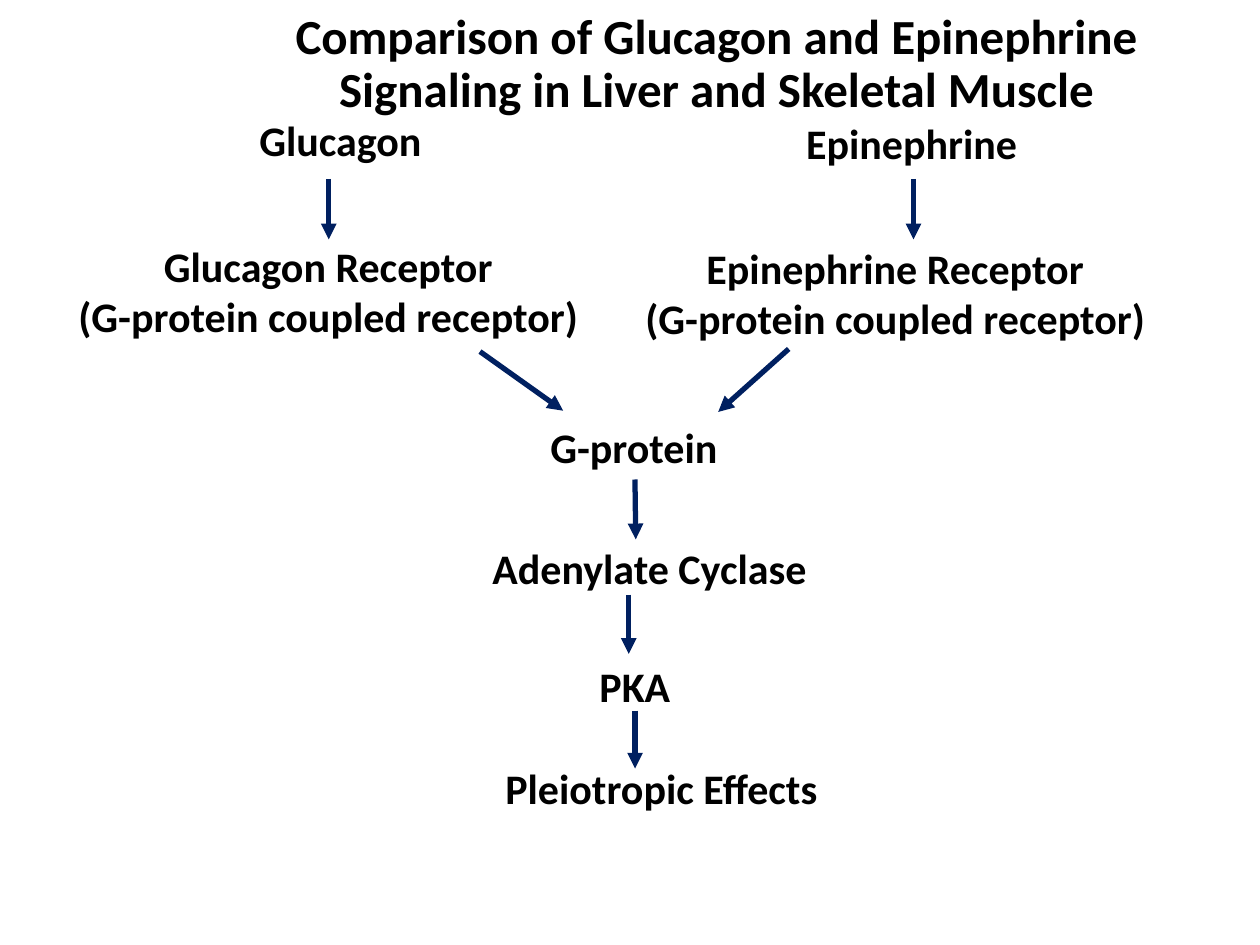
from dataclasses import dataclass

from lxml import etree
from pptx import Presentation
from pptx.dml.color import RGBColor
from pptx.enum import shapes, text
from pptx.oxml import ns
from pptx.shapes.autoshape import Shape
from pptx.slide import Slide
from pptx.util import Pt


@dataclass(frozen=True)
class Theme:
    font: str = "Calibri"
    ink: RGBColor = RGBColor(0x00, 0x00, 0x00)
    arrow: RGBColor = RGBColor(0x00, 0x20, 0x60)
    title_size: float = 28
    label_size: float = 24
    arrow_width: float = 3


@dataclass(frozen=True)
class Label:
    lines: tuple[str, ...]
    left: float
    top: float
    width: float
    height: float = 36.4
    align: text.PP_ALIGN = text.PP_ALIGN.LEFT


@dataclass(frozen=True)
class Arrow:
    start: tuple[float, float]
    end: tuple[float, float]
    source: str = ""


THEME = Theme()
TITLE = "Comparison of Glucagon and Epinephrine Signaling in Liver and Skeletal Muscle"
COUPLING = "(G-protein coupled receptor)"
CENTER = text.PP_ALIGN.CENTER

LABELS = (
    Label(("Glucagon",), 141.1, 62, 108),
    Label(("Epinephrine",), 453.6, 63.4, 136.1),
    Label(("Glucagon Receptor", COUPLING), 36, 133.9, 303.1, 65.4, CENTER),
    Label(("Epinephrine Receptor", COUPLING), 360, 134.9, 303.1, 65.4, CENTER),
    Label(("G-protein",), 307.4, 237.6, 110.9),
    Label(("Adenylate Cyclase",), 274.3, 306.2, 195.8),
    Label(("PKA",), 335.5, 374, 55.4),
    Label(("Pleiotropic Effects",), 281.7, 432.2, 195.1),
)

ARROWS = (
    Arrow((187.9, 102.2), (187.9, 136.8)),
    Arrow((522, 102.2), (522, 136.8)),
    Arrow((274.3, 200.9), (321.8, 234.7)),
    Arrow((450.7, 199.4), (410.4, 235.4)),
    Arrow((362.9, 273.6), (363.3, 308.2), "G-protein"),
    Arrow((359.3, 339.8), (359.3, 373.7)),
    Arrow((362.9, 406.1), (362.9, 439.2)),
)


def add_run(paragraph, wording: str, size: float) -> None:
    run = paragraph.add_run()
    run.text = wording
    run.font.name = THEME.font
    run.font.size = Pt(size)
    run.font.bold = True
    run.font.color.rgb = THEME.ink


def draw_title(slide: Slide) -> None:
    heading = slide.shapes.title
    heading.left, heading.top = Pt(115.2), Pt(6.5)
    heading.width, heading.height = Pt(588.2), Pt(61.2)
    frame = heading.text_frame
    frame.word_wrap = True
    frame.auto_size = text.MSO_AUTO_SIZE.NONE
    frame.vertical_anchor = text.MSO_ANCHOR.MIDDLE
    paragraph = frame.paragraphs[0]
    paragraph.alignment = CENTER
    paragraph.line_spacing = 0.9
    add_run(paragraph, TITLE, THEME.title_size)


def draw_label(slide: Slide, label: Label) -> Shape:
    box = slide.shapes.add_textbox(
        Pt(label.left), Pt(label.top), Pt(label.width), Pt(label.height)
    )
    frame = box.text_frame
    frame.word_wrap = False
    frame.auto_size = text.MSO_AUTO_SIZE.SHAPE_TO_FIT_TEXT
    for index, line in enumerate(label.lines):
        paragraph = frame.add_paragraph() if index else frame.paragraphs[0]
        paragraph.alignment = label.align
        add_run(paragraph, line, THEME.label_size)
    return box


def draw_arrow(slide: Slide, arrow: Arrow, steps: dict[str, Shape]) -> None:
    connector = slide.shapes.add_connector(
        shapes.MSO_CONNECTOR.STRAIGHT, *map(Pt, arrow.start + arrow.end)
    )
    if arrow.source:
        connector.begin_connect(steps[arrow.source], 2)
    connector.line.color.rgb = THEME.arrow
    connector.line.width = Pt(THEME.arrow_width)
    etree.SubElement(
        connector.line._get_or_add_ln(), ns.qn("a:tailEnd"), type="triangle"
    )
    etree.SubElement(connector._element.spPr, ns.qn("a:effectLst"))


def main() -> None:
    deck = Presentation()
    deck.slide_width, deck.slide_height = Pt(720), Pt(540)
    slide = deck.slides.add_slide(deck.slide_layouts[5])
    draw_title(slide)
    steps = {label.lines[0]: draw_label(slide, label) for label in LABELS}
    for arrow in ARROWS:
        draw_arrow(slide, arrow, steps)
    deck.save("out.pptx")


if __name__ == "__main__":
    main()
